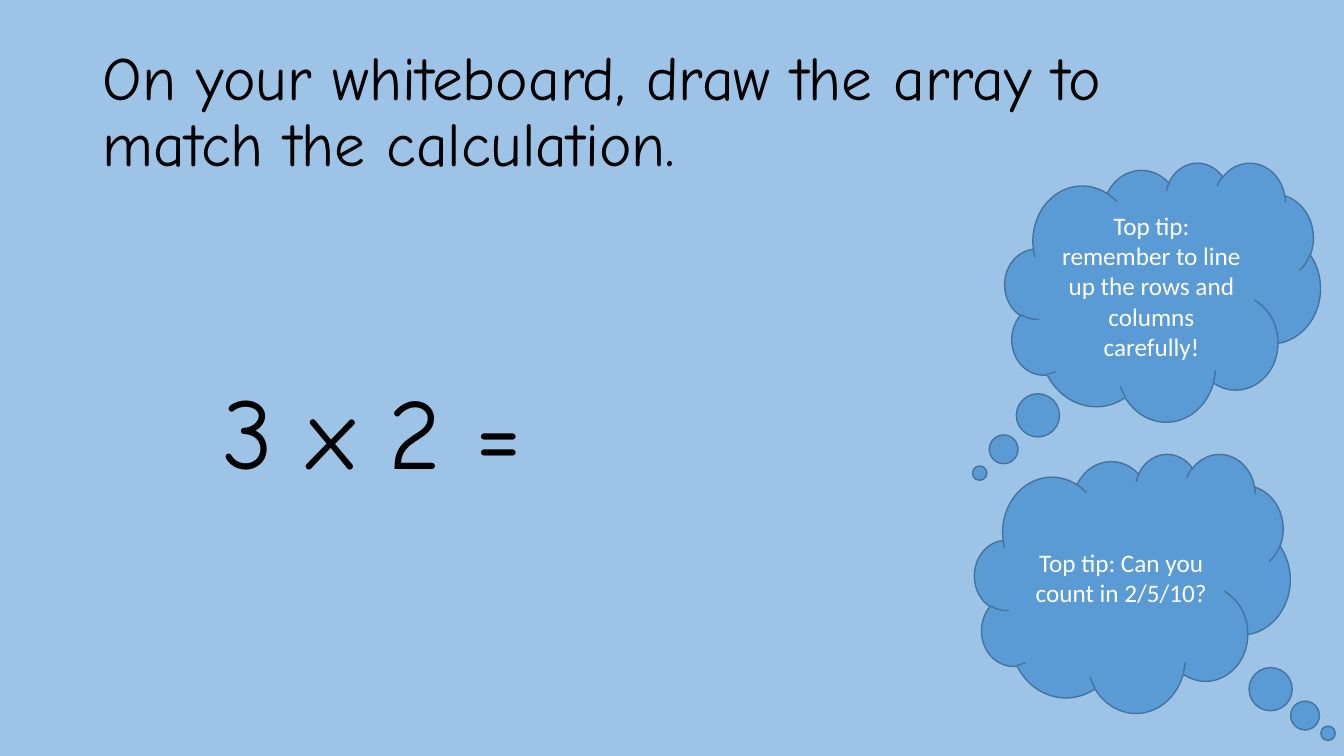
from pptx import Presentation
from pptx.dml.color import RGBColor
from pptx.enum.shapes import MSO_SHAPE as Kind
from pptx.enum.text import MSO_ANCHOR as Anchor, MSO_AUTO_SIZE as Fit, PP_ALIGN as Align
from pptx.util import Pt


def paint(fill, color):
    """Give a fill one solid colour."""
    fill.solid()
    fill.fore_color.rgb = RGBColor.from_string(color)


def place(shape, left, top, width, height):
    """Set the position and size of a shape in points."""
    shape.left, shape.top = Pt(left), Pt(top)
    shape.width, shape.height = Pt(width), Pt(height)


def write(shape, text, size=18, font="Comic Neue", color="000000",
          align=Align.LEFT, anchor=Anchor.MIDDLE, fit=Fit.NONE, space=1.0):
    """Put formatted text into a shape."""
    frame = shape.text_frame
    frame.word_wrap = True
    frame.auto_size = fit
    frame.vertical_anchor = anchor
    para = frame.paragraphs[0]
    para.alignment = align
    para.line_spacing = space
    run = para.add_run()
    run.text = text
    run.font.size = Pt(size)
    run.font.name = font
    paint(run.font.fill, color)


def add_tip(slide, text, left, top, tail):
    """Draw a thought cloud whose bubbles lead to the tail."""
    cloud = slide.shapes.add_shape(
        Kind.CLOUD_CALLOUT, Pt(left), Pt(top), Pt(225.4), Pt(185))
    cloud.shadow.inherit = False
    cloud.adjustments[0], cloud.adjustments[1] = tail
    paint(cloud.fill, "5B9BD5")
    paint(cloud.line.fill, "43739E")
    cloud.line.width = Pt(1)
    write(cloud, text, font="Calibri", color="FFFFFF", align=Align.CENTER)


def main():
    """Build the slide and save it."""
    deck = Presentation()
    deck.slide_width, deck.slide_height = Pt(960), Pt(540)
    slide = deck.slides.add_slide(deck.slide_layouts.get_by_name("Title Only"))
    paint(slide.background.fill, "9DC3E6")

    title = slide.shapes.title
    place(title, 66, 28.75, 828, 104.4)
    write(title, "On your whiteboard, draw the array to match the calculation.",
          size=44, space=0.9)

    sum_box = slide.shapes.add_textbox(Pt(152), Pt(260), Pt(381.6), Pt(94.3))
    write(sum_box, "3 x 2 =", size=72, anchor=Anchor.TOP, fit=Fit.SHAPE_TO_FIT_TEXT)

    add_tip(slide, "Top tip: Can you count in 2/5/10?", 696.2, 324, (0.62, 0.58))
    add_tip(slide, "Top tip: remember to line up the rows and columns carefully!",
            717.8, 116, (-0.58, 0.7))
    deck.save("out.pptx")


if __name__ == "__main__":
    main()
